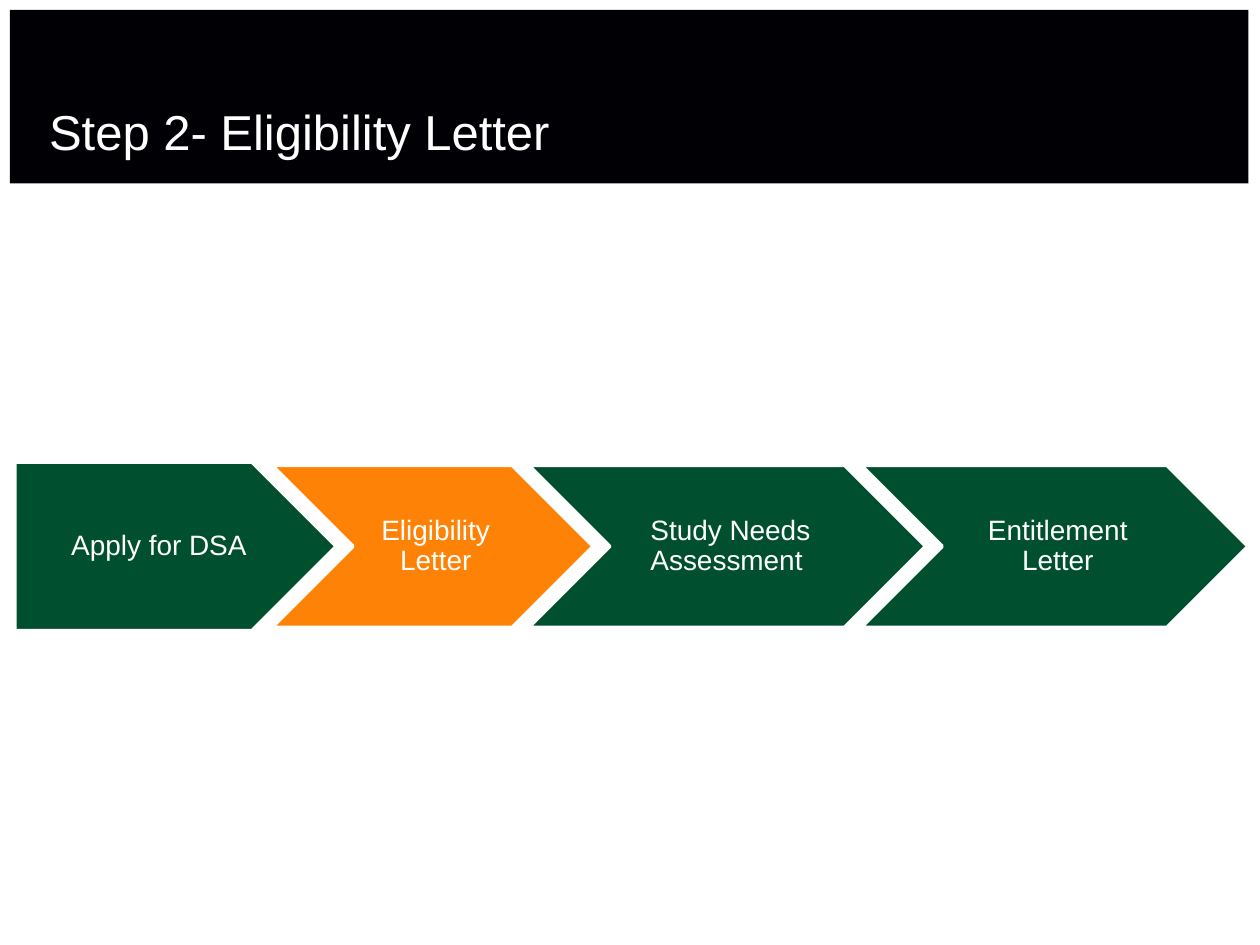
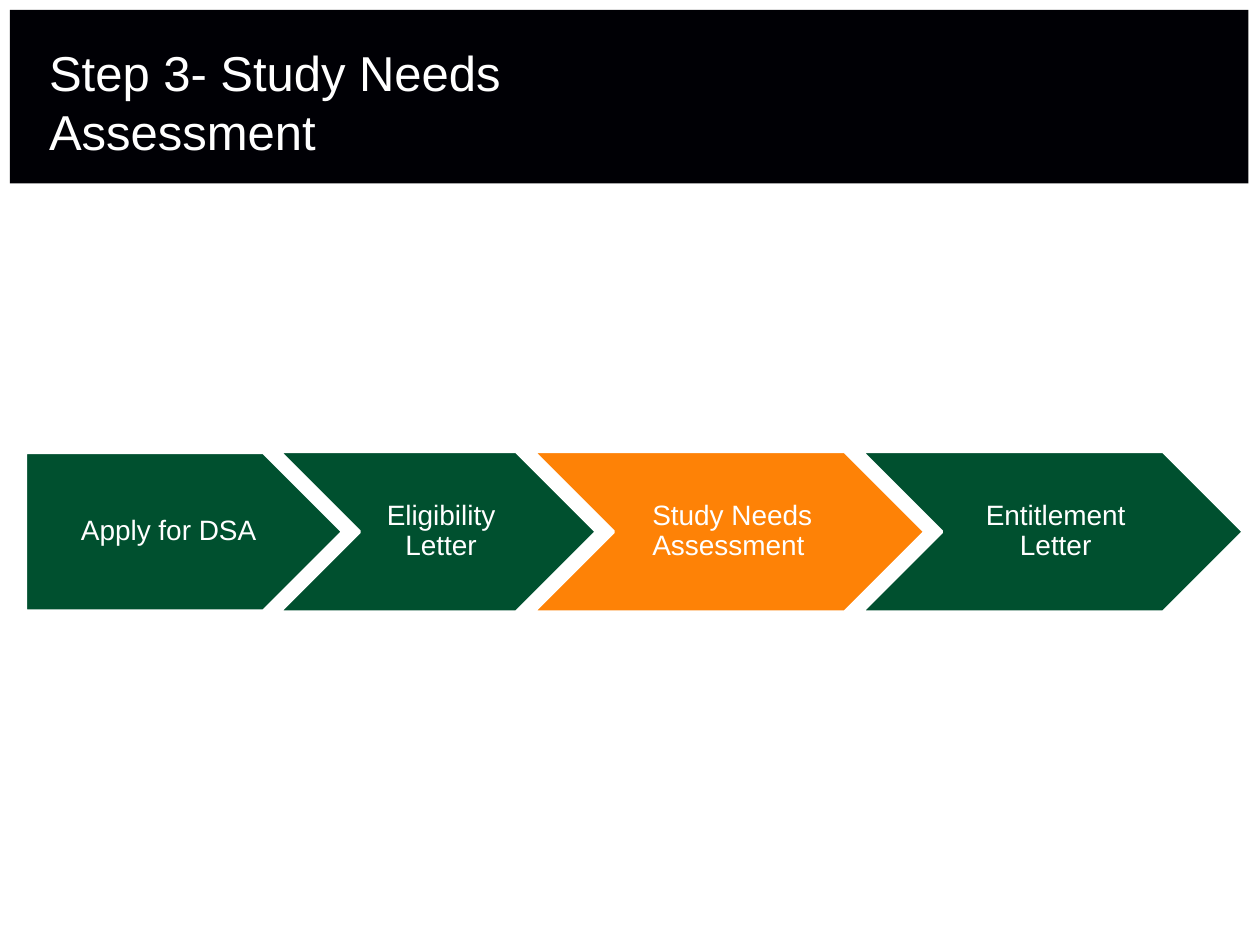
from pptx import Presentation
from pptx.dml.color import RGBColor
from pptx.enum.shapes import MSO_SHAPE
from pptx.enum.text import MSO_ANCHOR, MSO_AUTO_SIZE, PP_ALIGN
from pptx.util import Cm, Pt

FONT = "Arial"
BLACK, WHITE, GREEN, ORANGE = "000005", "FFFFFF", "00502F", "FE8206"

# Boxes are left, top, width, height in centimetres
BAND_BOX = (0.2, 0.2, 24.97, 3.5)
TITLE_BOX = (0.99, 1.17, 13.54, 2.06)

TITLE_FRAME = {"vertical_anchor": MSO_ANCHOR.BOTTOM, "margin_left": 0, "margin_top": 0,
               "margin_right": 0, "margin_bottom": 0}
STEP_FRAME = {"vertical_anchor": MSO_ANCHOR.MIDDLE, "margin_left": Cm(0.18), "margin_top": Cm(0.13),
              "margin_right": Cm(0.05), "margin_bottom": Cm(0.13)}
FIRST_STEP_FRAME = {**STEP_FRAME, "margin_left": Cm(0.23)}

# Step names with their widths relative to one another
STEPS = [("Apply for DSA", 6.48), ("Eligibility Letter", 6.48),
         ("Study Needs Assessment ", 8.0), ("Entitlement Letter", 7.8)]
OVERLAP = 1.3

# Title, highlighted step, box of the process row, height of the first arrow
SLIDES = [
    ("Step 2- Eligibility Letter", 1, (0.3, 9.38, 24.86, 3.27), 3.4),
    ("Step 3- Study Needs Assessment", 2, (0.51, 9.1, 24.56, 3.24), 3.2),
]


def color(hex_value):
    return RGBColor.from_string(hex_value)


def set_attributes(target, values):
    for name, value in values.items():
        setattr(target, name, value)


def write_text(shape, text, size, frame_values, paragraph_values):
    frame = shape.text_frame
    frame.text = text
    set_attributes(frame, {"word_wrap": True, "auto_size": MSO_AUTO_SIZE.NONE, **frame_values})
    paragraph = frame.paragraphs[0]
    set_attributes(paragraph, paragraph_values)
    set_attributes(paragraph.font, {"name": FONT, "size": Pt(size)})
    paragraph.font.color.rgb = color(WHITE)


def add_filled_shape(slide, kind, box, fill):
    shape = slide.shapes.add_shape(kind, *(Cm(length) for length in box))
    shape.shadow.inherit = False
    shape.fill.solid()
    shape.fill.fore_color.rgb = color(fill)
    return shape


def add_header(slide, band_box, title_box, text):
    # Dark band, placed behind the title
    title = slide.shapes.title
    band = add_filled_shape(slide, MSO_SHAPE.RECTANGLE, band_box, BLACK)
    band.line.fill.background()
    title.element.addprevious(band.element)

    # Title
    names = ("left", "top", "width", "height")
    set_attributes(title, dict(zip(names, (Cm(length) for length in title_box))))
    write_text(title, text, 28, TITLE_FRAME, {"alignment": PP_ALIGN.LEFT})


def add_process(slide, box, first_height, highlighted):
    left, top, width, height = box
    scale = width / (sum(share for _, share in STEPS) - OVERLAP * (len(STEPS) - 1))
    for index, (name, share) in enumerate(STEPS):
        is_first = index == 0
        kind = MSO_SHAPE.PENTAGON if is_first else MSO_SHAPE.CHEVRON
        step_height = first_height if is_first else height
        step_top = top + (height - step_height) / 2
        fill = ORANGE if index == highlighted else GREEN
        step = add_filled_shape(slide, kind, (left, step_top, share * scale, step_height), fill)
        step.line.color.rgb = color(WHITE)
        step.line.width = Pt(2)
        write_text(step, name, 16, FIRST_STEP_FRAME if is_first else STEP_FRAME,
                   {"alignment": PP_ALIGN.CENTER, "line_spacing": 0.9})
        left += (share - OVERLAP) * scale


def main():
    presentation = Presentation()
    presentation.slide_width, presentation.slide_height = Cm(25.4), Cm(19.05)
    title_only = presentation.slide_layouts[5]
    for title, highlighted, process_box, first_height in SLIDES:
        slide = presentation.slides.add_slide(title_only)
        add_header(slide, BAND_BOX, TITLE_BOX, title)
        add_process(slide, process_box, first_height, highlighted)
    presentation.save("out.pptx")


if __name__ == "__main__":
    main()
